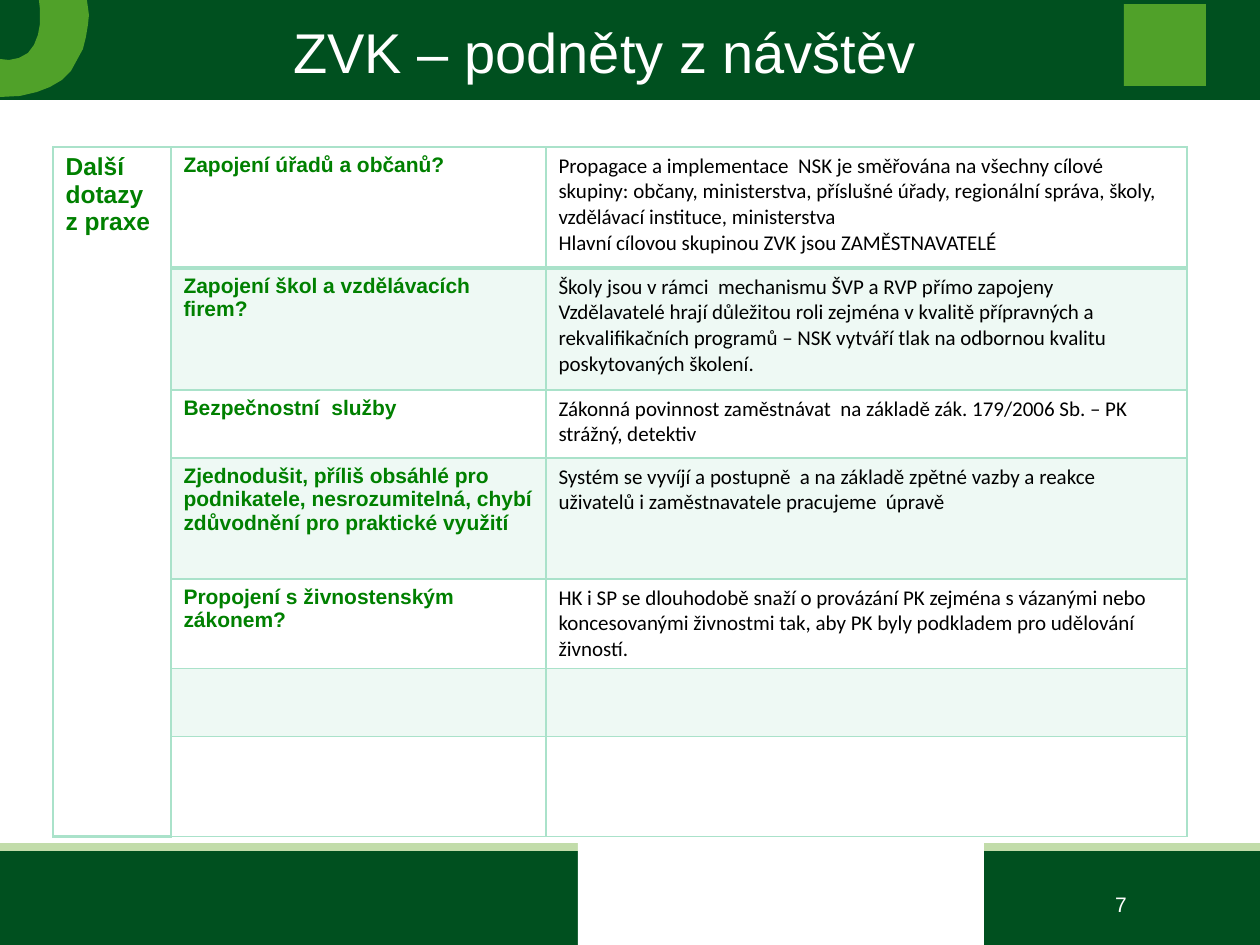
from dataclasses import dataclass

from lxml.etree import SubElement
from pptx import Presentation
from pptx.dml.color import RGBColor as Rgb
from pptx.enum.shapes import MSO_SHAPE as Kind
from pptx.enum.text import MSO_ANCHOR as Anchor, MSO_AUTO_SIZE as Fit, PP_ALIGN as Align
from pptx.oxml.ns import qn
from pptx.util import Emu, Pt

SCALE = 914400 / 126  # EMU in one px

DARK = Rgb(0x00, 0x50, 0x1F)
LEAF = Rgb(0x50, 0xA1, 0x29)
PALE = Rgb(0xC2, 0xDC, 0xAA)
MINT = Rgb(0xAA, 0xE2, 0xCA)
GREEN = Rgb(0x00, 0x80, 0x00)
WHITE = Rgb(0xFF, 0xFF, 0xFF)
BLACK = Rgb(0x00, 0x00, 0x00)


@dataclass
class Box:
    x: int
    y: int
    w: int
    h: int
    fill: Rgb = WHITE

    def emu(self) -> list[Emu]:
        return [px(n) for n in (self.x, self.y, self.w, self.h)]


@dataclass
class Type:
    font: str
    size: int
    color: Rgb
    bold: bool = False


HEAD = Type("Arial", 32, WHITE)
PAGE = Type("Arial", 12, WHITE)
SIDE = Type("Arial", 14, GREEN, True)
ASK = Type("Arial", 12, GREEN, True)
REPLY = Type("Calibri", 12, BLACK)

BARS = [
    Box(0, 847, 1260, 98, DARK),  # footer
    Box(0, 843, 1260, 8, PALE),
    Box(578, 839, 406, 106, WHITE),
    Box(0, 0, 1260, 100, DARK),  # header
    Box(1124, 4, 82, 82, LEAF),  # emblem square
]
ARC = [(87, 0), (89, 15), (88, 25), (86, 37), (83, 49), (77, 60), (71, 71),
       (62, 80), (50, 87), (37, 92), (20, 96), (0, 97), (0, 59), (9, 60),
       (19, 58), (28, 53), (34, 45), (38, 35), (40, 24), (40, 9), (39, 0)]

COLS = [118, 375, 641]
ROWS = [121, 122, 68, 121, 88, 68, 100]
TOPIC = "Další dotazy\nz praxe"
PAIRS = [
    ("Zapojení úřadů a občanů?",
     "Propagace a implementace  NSK je směřována na všechny cílové skupiny: "
     "občany, ministerstva, příslušné úřady, regionální správa, školy, "
     "vzdělávací instituce, ministerstva\n"
     "Hlavní cílovou skupinou ZVK jsou ZAMĚSTNAVATELÉ"),
    ("Zapojení škol a vzdělávacích  firem?",
     "Školy jsou v rámci  mechanismu ŠVP a RVP přímo zapojeny\n"
     "Vzdělavatelé hrají důležitou roli zejména v kvalitě přípravných a "
     "rekvalifikačních programů – NSK vytváří tlak na odbornou kvalitu "
     "poskytovaných školení."),
    ("Bezpečnostní  služby",
     "Zákonná povinnost zaměstnávat  na základě zák. 179/2006 Sb. – PK "
     "strážný, detektiv"),
    ("Zjednodušit, příliš obsáhlé pro podnikatele, nesrozumitelná, chybí "
     "zdůvodnění pro praktické využití",
     "Systém se vyvíjí a postupně  a na základě zpětné vazby a reakce "
     "uživatelů i zaměstnavatele pracujeme  úpravě"),
    ("Propojení s živnostenským zákonem?",
     "HK i SP se dlouhodobě snaží o provázání PK zejména s vázanými nebo "
     "koncesovanými živnostmi tak, aby PK byly podkladem pro udělování "
     "živností."),
]


def px(n: float) -> Emu:
    return Emu(round(n * SCALE))


def write(frame, text: str, kind: Type, align=None) -> None:
    frame.text = text
    for para in frame.paragraphs:
        if align is not None:
            para.alignment = align
        for run in para.runs:
            font = run.font
            font.name, font.size, font.bold = kind.font, Pt(kind.size), kind.bold
            font.color.rgb = kind.color


def paint(shape, color: Rgb) -> None:
    shape.shadow.inherit = False
    shape.fill.solid()
    shape.fill.fore_color.rgb = color
    shape.line.fill.background()


def label(shape, box: Box, text: str, kind: Type) -> None:
    shape.left, shape.top, shape.width, shape.height = box.emu()
    frame = shape.text_frame
    frame.word_wrap = True
    frame.auto_size = Fit.NONE
    frame.vertical_anchor = Anchor.MIDDLE
    write(frame, text, kind, Align.CENTER)


def rule(cell, base: int) -> None:
    """Draw the four borders, with base as the width of the lower one."""
    props = cell._tc.get_or_add_tcPr()
    for side, width in (("L", 1), ("R", 1), ("T", 1), ("B", base)):
        line = SubElement(props, qn(f"a:ln{side}"), w=str(Pt(width)))
        fill = SubElement(line, qn("a:solidFill"))
        SubElement(fill, qn("a:srgbClr"), val=str(MINT))


def tint(cell, band: bool) -> None:
    if not band:
        cell.fill.background()
        return
    cell.fill.solid()
    cell.fill.fore_color.rgb = MINT
    color = cell._tc.tcPr.find(f"{qn('a:solidFill')}/{qn('a:srgbClr')}")
    SubElement(color, qn("a:alpha"), val="20000")


def grid(slide) -> None:
    area = Box(53, 147, sum(COLS), sum(ROWS))
    table = slide.shapes.add_table(len(ROWS), len(COLS), *area.emu()).table
    table.first_row = table.horz_banding = False
    for col, width in zip(table.columns, COLS):
        col.width = px(width)
    for row, height in zip(table.rows, ROWS):
        row.height = px(height)

    # Borders and bands
    last = len(ROWS) - 1
    for r in range(len(ROWS)):
        for c in range(len(COLS)):
            cell = table.cell(r, c)
            rule(cell, 2 if r == 0 or (c == 0 and r == last) else 1)
            tint(cell, c > 0 and r % 2 == 1)

    # Topic, questions and replies
    table.cell(0, 0).merge(table.cell(last, 0))
    write(table.cell(0, 0).text_frame, TOPIC, SIDE)
    for r, (ask, reply) in enumerate(PAIRS):
        write(table.cell(r, 1).text_frame, ask, ASK)
        write(table.cell(r, 2).text_frame, reply, REPLY)


def main() -> None:
    deck = Presentation()
    deck.slide_width, deck.slide_height = px(1260), px(945)
    slide = deck.slides.add_slide(deck.slide_layouts[5])
    shapes = slide.shapes

    # Header and footer bands
    for bar in BARS:
        paint(shapes.add_shape(Kind.RECTANGLE, *bar.emu()), bar.fill)
    pen = shapes.build_freeform(*ARC[0], scale=SCALE)
    pen.add_line_segments(ARC[1:], close=True)
    paint(pen.convert_to_shape(), LEAF)

    # Title, raised above the header band
    title = shapes.title
    shapes._spTree.append(title._element)
    label(title, Box(94, 11, 1022, 80), "ZVK – podněty z návštěv", HEAD)

    # Page number
    spot = Box(997, 880, 248, 49)
    label(shapes.add_textbox(*spot.emu()), spot, "7", PAGE)

    grid(slide)
    deck.save("out.pptx")


if __name__ == "__main__":
    main()
